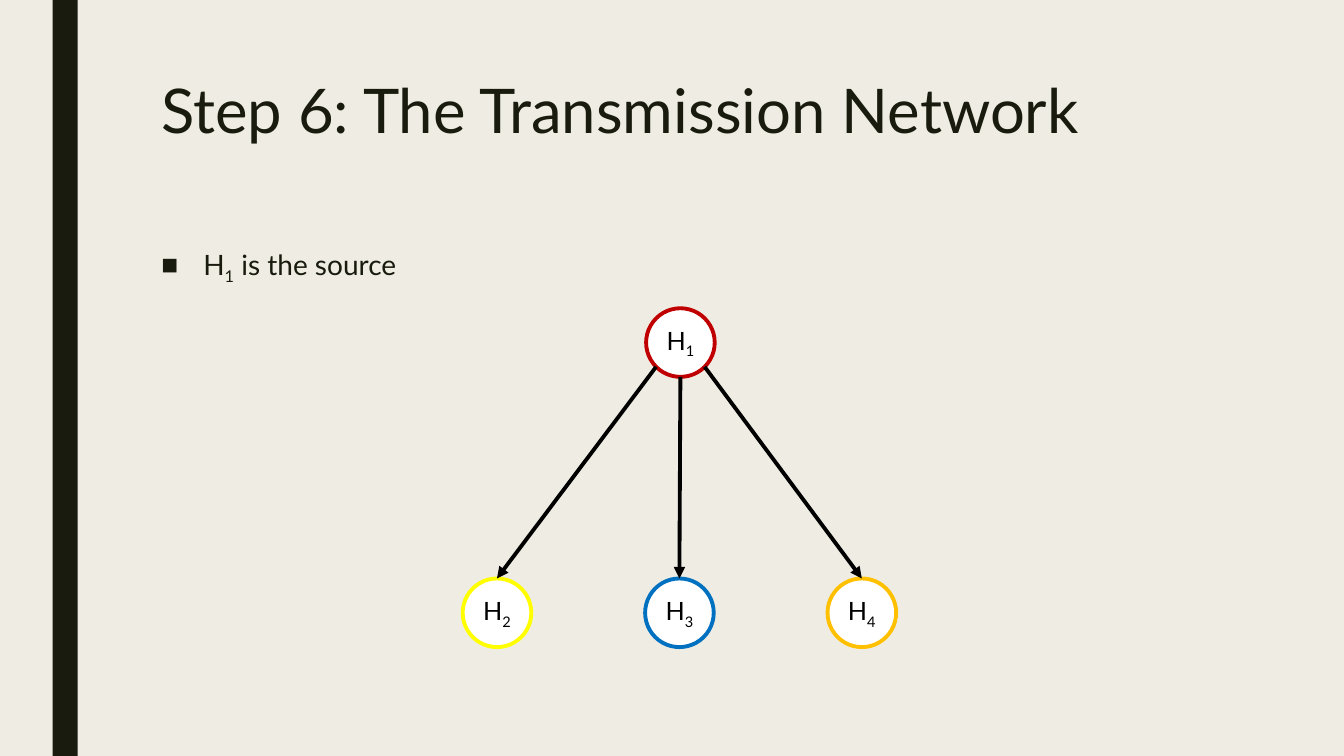
from math import sqrt

from lxml import etree
from pptx import Presentation
from pptx.dml.color import RGBColor
from pptx.enum.shapes import MSO_CONNECTOR as Connector, MSO_SHAPE as Shape
from pptx.enum.text import MSO_ANCHOR as Anchor, MSO_AUTO_SIZE as AutoSize, PP_ALIGN as Align
from pptx.oxml.ns import qn
from pptx.util import Pt

CREAM = RGBColor(0xEF, 0xED, 0xE3)
INK = RGBColor(0x19, 0x1B, 0x0E)
WHITE = RGBColor(0xFF, 0xFF, 0xFF)
BLACK = RGBColor(0x00, 0x00, 0x00)
RED = RGBColor(0xC0, 0x00, 0x00)
YELLOW = RGBColor(0xFF, 0xFF, 0x00)
BLUE = RGBColor(0x00, 0x70, 0xC0)
ORANGE = RGBColor(0xFF, 0xC0, 0x00)

FONT = "Lato"
LINE_WIDTH = 2.75
NODE_SIZE = 49


def place(shape, left, top, width, height):
    shape.left, shape.top = Pt(left), Pt(top)
    shape.width, shape.height = Pt(width), Pt(height)


def format_font(paragraph, size, color):
    paragraph.font.name = FONT
    paragraph.font.size = Pt(size)
    paragraph.font.color.rgb = color


def write_host(paragraph, number, rest=""):
    """Write H with a subscript number, then any following text."""
    paragraph.add_run().text = "H"
    subscript = paragraph.add_run()
    subscript.text = str(number)
    subscript.font._element.set("baseline", "-25000")
    if rest:
        paragraph.add_run().text = rest


def add_side_bar(slide, left, top, width, height):
    bar = slide.shapes.add_shape(Shape.RECTANGLE, Pt(left), Pt(top), Pt(width), Pt(height))
    bar.shadow.inherit = False
    bar.fill.solid()
    bar.fill.fore_color.rgb = INK
    bar.line.fill.background()


def fill_title(title, left, top, width, height):
    place(title, left, top, width, height)
    frame = title.text_frame
    frame.auto_size = AutoSize.NONE
    frame.vertical_anchor = Anchor.TOP
    paragraph = frame.paragraphs[0]
    paragraph.text = "Step 6: The Transmission Network"
    paragraph.alignment = Align.LEFT
    paragraph.line_spacing = 0.89
    format_font(paragraph, 44, INK)


def fill_body(body, left, top, width, height):
    place(body, left, top, width, height)
    frame = body.text_frame
    frame.auto_size = AutoSize.NONE
    paragraph = frame.paragraphs[0]
    write_host(paragraph, 1, " is the source")
    paragraph.line_spacing = 0.94
    paragraph.space_before, paragraph.space_after = Pt(10), Pt(2)
    properties = paragraph._p.get_or_add_pPr()
    properties.set("marL", str(Pt(30)))
    properties.set("indent", str(-Pt(30)))
    etree.SubElement(properties, qn("a:buFont")).set("typeface", "Arial")
    etree.SubElement(properties, qn("a:buChar")).set("char", "■")
    format_font(paragraph, 20, INK)


def add_node(slide, number, color, left, top):
    node = slide.shapes.add_shape(
        Shape.OVAL, Pt(left), Pt(top), Pt(NODE_SIZE), Pt(NODE_SIZE))
    node.shadow.inherit = False
    node.fill.solid()
    node.fill.fore_color.rgb = WHITE
    node.line.color.rgb = color
    node.line.width = Pt(LINE_WIDTH)
    frame = node.text_frame
    frame.vertical_anchor = Anchor.MIDDLE
    paragraph = frame.paragraphs[0]
    write_host(paragraph, number)
    paragraph.alignment = Align.CENTER
    format_font(paragraph, 18, BLACK)
    return node


def add_arrow(slide, start_x, start_y, target):
    """Draw an arrow from a point to the top of the target node."""
    arrow = slide.shapes.add_connector(
        Connector.STRAIGHT, Pt(start_x), Pt(start_y), target.left, target.top)
    arrow.end_connect(target, 0)
    arrow.line.color.rgb = BLACK
    arrow.line.width = Pt(LINE_WIDTH)
    etree.SubElement(arrow.line._get_or_add_ln(), qn("a:tailEnd")).set("type", "triangle")
    etree.SubElement(arrow._element.spPr, qn("a:effectLst"))


def add_network(slide, left, top, width, height):
    """Place the source at the top and its three recipients along the bottom."""
    radius = NODE_SIZE / 2
    source_left = left + (width - NODE_SIZE) / 2 + 0.7
    add_node(slide, 1, RED, source_left, top)
    center_x, center_y = source_left + radius, top + radius
    diagonal = radius / sqrt(2)
    exits = [(-diagonal, diagonal), (0, radius), (diagonal, diagonal)]
    step = (width - NODE_SIZE) / 2
    for index, (color, (dx, dy)) in enumerate(zip((YELLOW, BLUE, ORANGE), exits)):
        recipient = add_node(
            slide, index + 2, color, left + index * step, top + height - NODE_SIZE)
        add_arrow(slide, center_x + dx, center_y + dy, recipient)


def main():
    presentation = Presentation()
    presentation.slide_width, presentation.slide_height = Pt(960), Pt(540)
    slide = presentation.slides.add_slide(presentation.slide_layouts[1])
    slide.background.fill.solid()
    slide.background.fill.fore_color.rgb = CREAM
    title, body = slide.placeholders
    add_side_bar(slide, 37.5, 0, 18, 540)
    fill_title(title, 108, 54, 756, 64)
    fill_body(body, 108, 173.5, 756, 312.5)
    add_network(slide, 330.5, 220.2, 309.6, 242)
    presentation.save("out.pptx")


if __name__ == "__main__":
    main()
